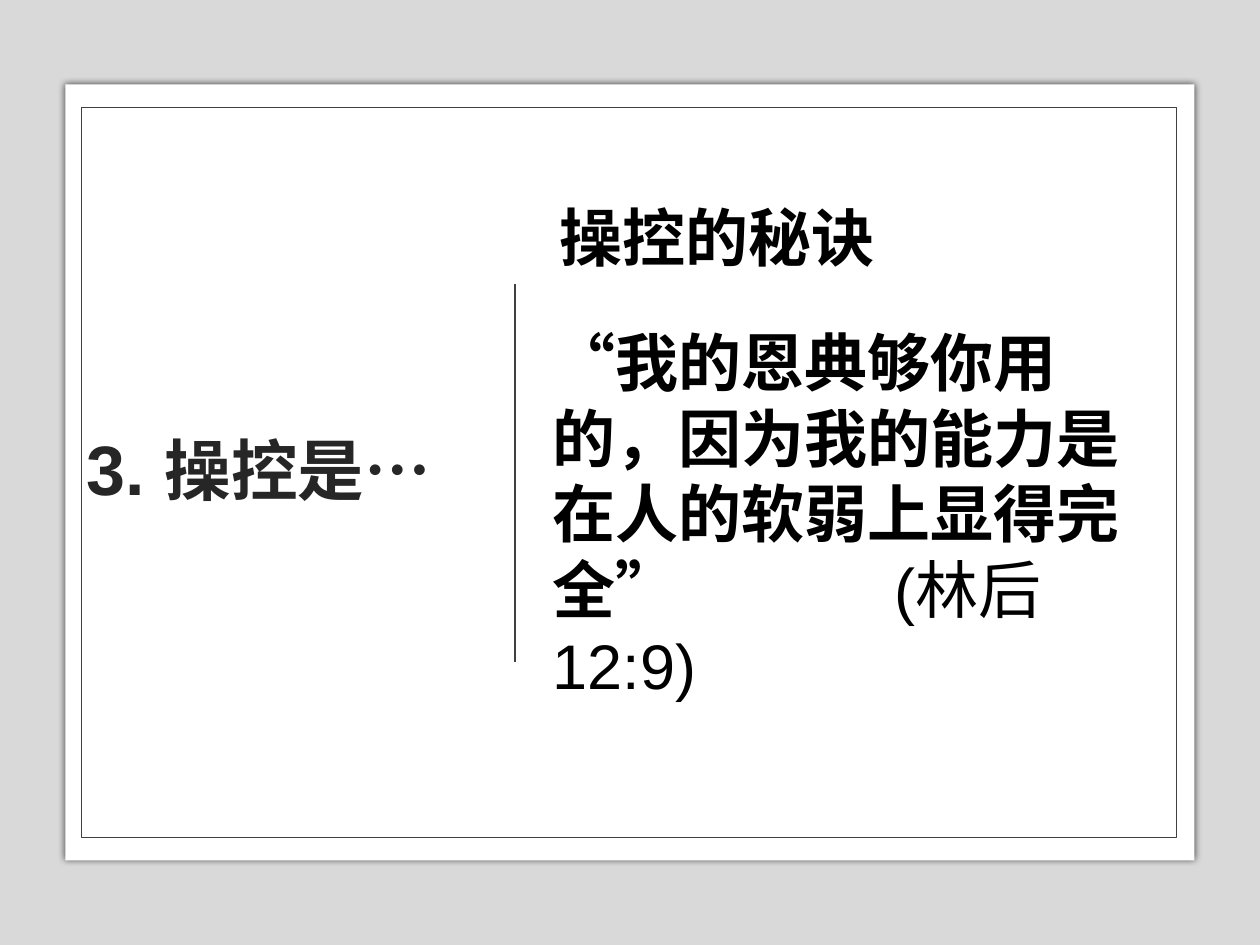
from lxml.etree import SubElement
from pptx import Presentation
from pptx.dml.color import RGBColor
from pptx.enum.shapes import MSO_CONNECTOR as Connector, MSO_SHAPE as Shape
from pptx.enum.text import MSO_ANCHOR as Anchor
from pptx.oxml.ns import qn
from pptx.util import Inches, Pt

COLORS = {"backdrop": "D9D9D9", "paper": "FFFFFF", "rule": "404040",
          "title": "262626", "body": "000000", "shadow": "000000"}
LATIN, CJK = "Arial", "Noto Sans CJK SC"

# Runs: text, size, font, bold
TITLE = [("3. ", 40, LATIN, True), ("操控是…", 38, LATIN, True)]
HEADING = [("操控的秘诀", 36, CJK, True)]
VERSE = [("“", 36, LATIN, True),
         ("我的恩典够你用的，因为我的能力是在人的软弱上显得完全", 36, CJK, True),
         ("”\t", 36, LATIN, True),
         ("(林后 12:9)", 36, LATIN, False)]

# Panels: left, top, width, height, fill, line
BACKDROP = (0, 0, 10, 7.5, "backdrop", None)
PAPER = (0.52, 0.67, 8.96, 6.16, "paper", None)
FRAME = (0.65, 0.85, 8.69, 5.8, "paper", "rule")
DIVIDER = (4.09, 2.25, 4.09, 5.25)
REFERENCE_TAB = 2.71


def rgb(name):
    return RGBColor.from_string(COLORS[name])


def add_panel(slide, left, top, width, height, fill, line):
    panel = slide.shapes.add_shape(
        Shape.RECTANGLE, *map(Inches, (left, top, width, height)))
    panel.shadow.inherit = False
    panel.fill.solid()
    panel.fill.fore_color.rgb = rgb(fill)
    if line:
        panel.line.color.rgb = rgb(line)
        panel.line.width = Pt(0.5)
    else:
        panel.line.fill.background()
    return panel


def add_glow_shadow(panel):
    """Give the panel a soft, centred outer shadow."""
    effects = panel._element.spPr.find(qn("a:effectLst"))
    shadow = SubElement(effects, qn("a:outerShdw"), blurRad=str(Pt(4)),
                        dist="0", dir="0", algn="ctr", rotWithShape="0")
    color = SubElement(shadow, qn("a:srgbClr"), val=COLORS["shadow"])
    SubElement(color, qn("a:alpha"), val="66000")


def add_text(slide, box, runs, color, anchor=Anchor.TOP):
    frame = slide.shapes.add_textbox(*map(Inches, box)).text_frame
    frame.word_wrap = True
    frame.vertical_anchor = anchor
    paragraph = frame.paragraphs[0]
    # Punctuation must stay inside the right margin.
    paragraph._p.get_or_add_pPr().set("hangingPunct", "0")
    for text, size, font, bold in runs:
        run = paragraph.add_run()
        run.text = text
        run.font.size = Pt(size)
        run.font.name = font
        run.font.bold = bold
        run.font.color.rgb = rgb(color)
        SubElement(run.font._element, qn("a:ea"), typeface=CJK)
    return paragraph


def add_tab_stop(paragraph, position):
    tabs = SubElement(paragraph._p.get_or_add_pPr(), qn("a:tabLst"))
    SubElement(tabs, qn("a:tab"), pos=str(Inches(position)), algn="l")


def main():
    deck = Presentation()
    deck.slide_width, deck.slide_height = Inches(10), Inches(7.5)
    slide = deck.slides.add_slide(deck.slide_layouts[6])

    add_panel(slide, *BACKDROP)
    add_glow_shadow(add_panel(slide, *PAPER))
    add_panel(slide, *FRAME)

    title = add_text(slide, (0.59, 1.56, 3.39, 4.39), TITLE, "title", Anchor.MIDDLE)
    title.line_spacing = 0.9

    divider = slide.shapes.add_connector(Connector.STRAIGHT, *map(Inches, DIVIDER))
    divider.line.color.rgb = rgb("rule")
    divider.line.width = Pt(1.25)
    SubElement(divider._element.spPr, qn("a:effectLst"))

    add_text(slide, (4.34, 1.53, 6.18, 0.71), HEADING, "body")
    verse = add_text(slide, (4.29, 2.52, 5, 2.52), VERSE, "body")
    verse.space_before = Pt(6)
    add_tab_stop(verse, REFERENCE_TAB)

    deck.save("out.pptx")


if __name__ == "__main__":
    main()
